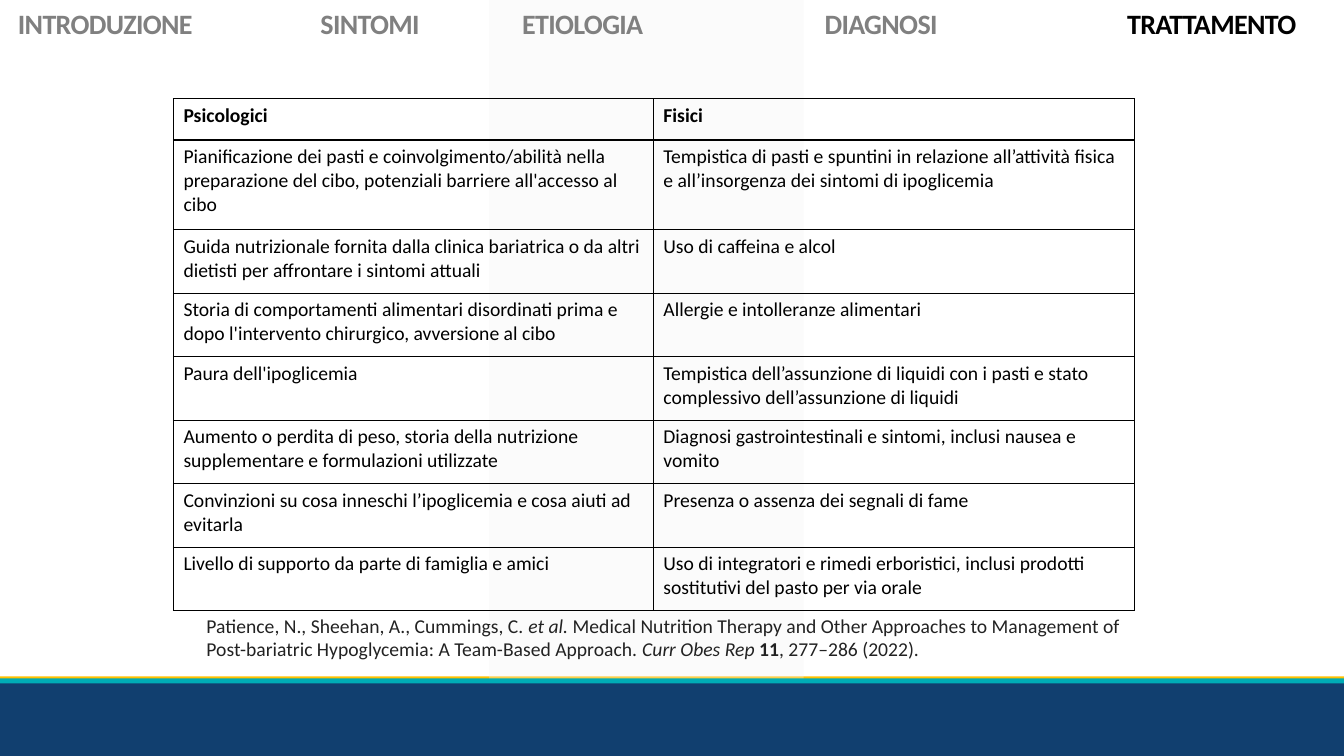
from pptx import Presentation
from pptx.dml.color import RGBColor
from pptx.enum.shapes import MSO_SHAPE as Shape
from pptx.enum.text import MSO_ANCHOR as Anchor
from pptx.oxml import parse_xml
from pptx.oxml.ns import nsdecls, qn
from pptx.util import Inches, Pt
from lxml.etree import SubElement

# Content
SECTIONS = ["INTRODUZIONE", "SINTOMI", "ETIOLOGIA", "DIAGNOSI", "TRATTAMENTO"]
CURRENT_SECTION = "TRATTAMENTO"
SECTION_STOPS = [3, 5, 8, 11]

FACTORS = [
    ("Psicologici", "Fisici"),
    ("Pianificazione dei pasti e coinvolgimento/abilità nella preparazione del cibo, "
     "potenziali barriere all'accesso al cibo",
     "Tempistica di pasti e spuntini in relazione all’attività fisica e all’insorgenza "
     "dei sintomi di ipoglicemia"),
    ("Guida nutrizionale fornita dalla clinica bariatrica o da altri dietisti per "
     "affrontare i sintomi attuali",
     "Uso di caffeina e alcol"),
    ("Storia di comportamenti alimentari disordinati prima e dopo l'intervento "
     "chirurgico, avversione al cibo",
     "Allergie e intolleranze alimentari"),
    ("Paura dell'ipoglicemia",
     "Tempistica dell’assunzione di liquidi con i pasti e stato complessivo "
     "dell’assunzione di liquidi"),
    ("Aumento o perdita di peso, storia della nutrizione supplementare e formulazioni "
     "utilizzate",
     "Diagnosi gastrointestinali e sintomi, inclusi nausea e vomito"),
    ("Convinzioni su cosa inneschi l’ipoglicemia e cosa aiuti ad evitarla",
     "Presenza o assenza dei segnali di fame"),
    ("Livello di supporto da parte di famiglia e amici",
     "Uso di integratori e rimedi erboristici, inclusi prodotti sostitutivi del pasto "
     "per via orale"),
]
COLUMN_WIDTHS = [4.76, 4.77]
ROW_HEIGHTS = [0.41, 0.89] + [0.63] * 6

# Citation pieces: text, italic, bold
CITATION = [
    ("Patience, N., Sheehan, A., Cummings, C.\xa0", False, False),
    ("et al.", True, False),
    ("\xa0Medical Nutrition Therapy and Other Approaches to Management of "
     "Post-bariatric Hypoglycemia: A Team-Based Approach.\xa0", False, False),
    ("Curr Obes Rep\xa0", True, False),
    ("11", False, True),
    (", 277–286 (2022).", False, False),
]

THEME = {
    "font": "Calibri", "body": 14, "nav": 20,
    "text": "000000", "muted": "808080", "citation": "222222",
    "yellow": "FFC000", "navy": "113F6F", "teal": "00ACB6", "panel": "F2F2F2",
}
WIDTH, HEIGHT = 13.33, 7.5

# Background parts, back to front: shape, left, top, width, height, colour
BACKDROP = [
    (Shape.RECTANGLE, 0, 6.71, WIDTH, 0.05, "yellow"),
    (Shape.RECTANGLE, 0, 6.75, WIDTH, 0.75, "navy"),
    (Shape.PARALLELOGRAM, 4.85, -0.14, 3.12, 6.89, "panel"),
    (Shape.RECTANGLE, 0, 6.73, WIDTH, 0.05, "teal"),
]


def style(run, size, color, bold=False, italic=False):
    font = run.font
    font.name, font.size = THEME["font"], Pt(THEME[size])
    font.bold, font.italic = bold, italic
    font.color.rgb = RGBColor.from_string(THEME[color])


def add_borders(cell):
    for side in ("lnL", "lnR", "lnT", "lnB"):
        cell._tc.get_or_add_tcPr().append(parse_xml(
            f'<a:{side} {nsdecls("a")} w="{Pt(1)}"><a:solidFill>'
            f'<a:srgbClr val="{THEME["text"]}"/></a:solidFill></a:{side}>'))


def add_text_box(slide, left, top, width, height):
    frame = slide.shapes.add_textbox(*map(Inches, (left, top, width, height))).text_frame
    frame.word_wrap = True
    return frame


def add_backdrop(slide):
    for kind, left, top, width, height, color in BACKDROP:
        part = slide.shapes.add_shape(kind, *map(Inches, (left, top, width, height)))
        part.shadow.inherit = False
        part.line.fill.background()
        part.fill.solid()
        part.fill.fore_color.rgb = RGBColor.from_string(THEME[color])
        if kind == Shape.PARALLELOGRAM:
            part.adjustments[0] = 0
            tint = part._element.spPr.find(qn("a:solidFill"))[0]
            SubElement(tint, qn("a:alpha"), val="30000")


def add_factors(slide):
    table = slide.shapes.add_table(
        len(FACTORS), len(COLUMN_WIDTHS), Inches(1.72), Inches(0.98),
        Inches(sum(COLUMN_WIDTHS)), Inches(sum(ROW_HEIGHTS))).table
    table.first_row = table.horz_banding = False
    for column, width in zip(table.columns, COLUMN_WIDTHS):
        column.width = Inches(width)
    for r, (row, height) in enumerate(zip(table.rows, ROW_HEIGHTS)):
        row.height = Inches(height)
        for cell, factor in zip(row.cells, FACTORS[r]):
            cell.text_frame.text = factor
            style(cell.text_frame.paragraphs[0].runs[0], "body", "text", bold=r == 0)
            add_borders(cell)
            cell.fill.background()


def add_citation(slide):
    paragraph = add_text_box(slide, 1.95, 6.04, 9.43, 0.57).paragraphs[0]
    for words, italic, bold in CITATION:
        run = paragraph.add_run()
        run.text = words
        style(run, "body", "citation", bold, italic)


def add_navigation(slide):
    frame = add_text_box(slide, 0.08, 0.1, 13.25, 0.35)
    frame.vertical_anchor = Anchor.BOTTOM
    paragraph = frame.paragraphs[0]
    paragraph.line_spacing, paragraph.space_after = 0.9, Pt(6)
    stops = SubElement(paragraph._p.get_or_add_pPr(), qn("a:tabLst"))
    for stop in SECTION_STOPS:
        SubElement(stops, qn("a:tab"), pos=str(Inches(stop)), algn="l")
    for i, section in enumerate(SECTIONS):
        run = paragraph.add_run()
        run.text = section if i == 0 else "\t" + section
        style(run, "nav", "text" if section == CURRENT_SECTION else "muted", bold=True)
        run._r.get_or_add_rPr().set("spc", "-50")


def main():
    deck = Presentation()
    deck.slide_width, deck.slide_height = Inches(WIDTH), Inches(HEIGHT)
    slide = deck.slides.add_slide(deck.slide_layouts[6])
    add_backdrop(slide)
    add_factors(slide)
    add_citation(slide)
    add_navigation(slide)
    deck.save("out.pptx")


if __name__ == "__main__":
    main()
